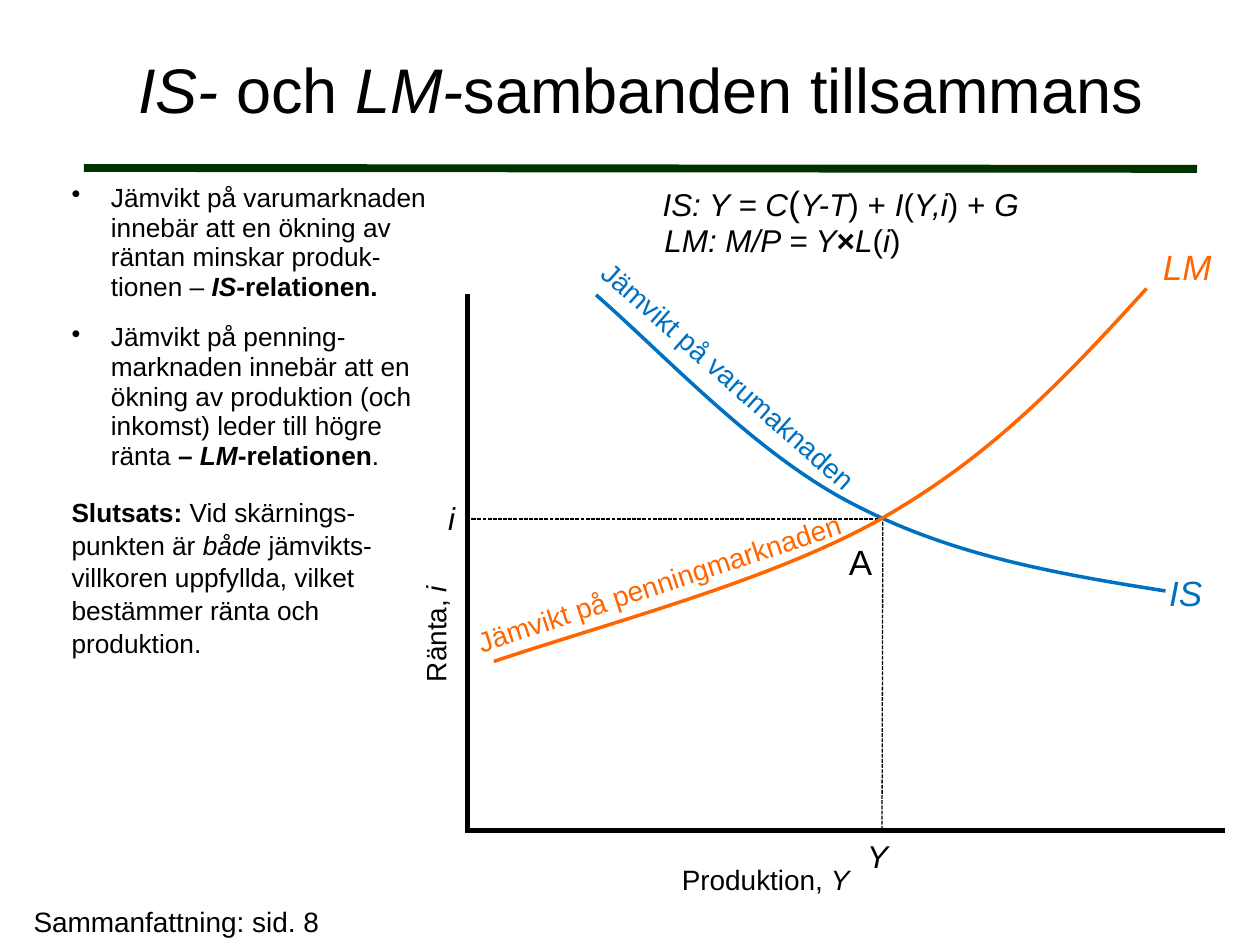
from lxml import etree
from pptx import Presentation
from pptx.dml.color import RGBColor
from pptx.enum.dml import MSO_LINE
from pptx.enum.shapes import MSO_CONNECTOR
from pptx.enum.text import MSO_ANCHOR, PP_ALIGN
from pptx.oxml.ns import qn
from pptx.util import Pt

STRAIGHT = MSO_CONNECTOR.STRAIGHT
DASH = MSO_LINE.SQUARE_DOT
LEFT, CENTER = PP_ALIGN.LEFT, PP_ALIGN.CENTER
TOP, MIDDLE = MSO_ANCHOR.TOP, MSO_ANCHOR.MIDDLE

COLORS = {"text": "000000", "rule": "003300", "is": "0070C0", "lm": "FF6600"}
FONT = "Arial"

ORIGIN_X, ORIGIN_Y = 267, 474.5
EQUILIBRIUM_X, EQUILIBRIUM_Y = 504, 296.6


class SlideBuilder:
    def __init__(self, slide):
        self.slide = slide

    def color(self, name):
        return RGBColor.from_string(COLORS[name])

    def line(self, start, end, width, color="text", dash=None):
        connector = self.slide.shapes.add_connector(
            STRAIGHT, *(Pt(value) for value in (*start, *end)))
        connector.line.color.rgb = self.color(color)
        connector.line.width = Pt(width)
        if dash:
            connector.line.dash_style = dash
        etree.SubElement(connector.element.spPr, qn("a:effectLst"))

    def curve(self, start, segments, color):
        """Draw cubic segments, each given as two control points and an end."""
        builder = self.slide.shapes.build_freeform(Pt(start[0]), Pt(start[1]))
        ends = [(Pt(x), Pt(y)) for _, _, (x, y) in segments]
        builder.add_line_segments(ends, close=False)
        shape = builder.convert_to_shape()
        for node, segment in zip(shape.element.xpath(".//a:lnTo"), segments):
            cubic = etree.Element(qn("a:cubicBezTo"))
            for x, y in segment:
                etree.SubElement(cubic, qn("a:pt"),
                                 x=str(Pt(x) - shape.left), y=str(Pt(y) - shape.top))
            node.getparent().replace(node, cubic)
        shape.fill.background()
        shape.line.color.rgb = self.color(color)
        shape.line.width = Pt(2)
        shape.shadow.inherit = False

    def text(self, box, runs, size, color="text", align=LEFT, anchor=TOP,
             wrap=False, rotation=0):
        shape = self.slide.shapes.add_textbox(*(Pt(value) for value in box))
        shape.rotation = rotation
        frame = shape.text_frame
        frame.word_wrap = wrap
        frame.vertical_anchor = anchor
        self.fill_paragraph(frame.paragraphs[0], runs, size, color, align)
        return frame

    def fill_paragraph(self, paragraph, runs, size, color="text", align=LEFT):
        """Add runs of (text, style[, size]); style holds "b" and/or "i"."""
        paragraph.alignment = align
        for text, style, *own_size in runs:
            run = paragraph.add_run()
            run.text = text
            font = run.font
            font.name = FONT
            font.size = Pt(own_size[0] if own_size else size)
            font.bold = "b" in style
            font.italic = "i" in style
            font.color.rgb = self.color(color)

    def bullet(self, paragraph):
        properties = paragraph._p.get_or_add_pPr()
        properties.set("marL", str(Pt(22.5)))
        properties.set("indent", str(Pt(-22.5)))
        etree.SubElement(properties, qn("a:buChar"), char="•")

    def body(self, box, bullets, conclusion, size):
        frame = self.text(box, [], size, wrap=True)
        for index, runs in enumerate([*bullets, conclusion]):
            paragraph = frame.add_paragraph() if index else frame.paragraphs[0]
            is_bullet = index < len(bullets)
            if is_bullet:
                self.bullet(paragraph)
            else:
                paragraph.space_before = Pt(1.5)
            paragraph.line_spacing = 0.94 if is_bullet else 1.04
            paragraph.space_after = Pt(12)
            self.fill_paragraph(paragraph, runs, size)


def main():
    presentation = Presentation()
    presentation.slide_width, presentation.slide_height = Pt(720), Pt(540)
    slide = presentation.slides.add_slide(presentation.slide_layouts[6])
    builder = SlideBuilder(slide)

    builder.line((48, 96), (684, 96.5), 4.5, "rule")
    builder.text((48, 6, 636, 89),
                 [("IS- ", "i"), ("och ", ""), ("LM-", "i"),
                  ("sambanden tillsammans", "")],
                 36, align=CENTER, anchor=MIDDLE, wrap=True)

    builder.body(
        (33.8, 101.5, 224.6, 363.6),
        [[("Jämvikt på varumarknaden innebär att en ökning av räntan "
           "minskar produk-tionen – ", ""), ("IS", "bi"), ("-relationen.", "b")],
         [("Jämvikt på penning-marknaden innebär att en ökning av produktion "
           "(och inkomst) leder till högre ränta ", ""), ("– ", "b"),
          ("LM", "bi"), ("-relationen", "b"), (".", "")]],
        [("Slutsats: ", "b"), ("Vid skärnings-punkten är ", ""), ("både ", "i"),
         ("jämvikts-villkoren uppfyllda, vilket bestämmer ränta och produktion.", "")],
        15)

    builder.text((371.5, 100, 250, 31.5),
                 [("IS: Y = C", "i"), ("(", "", 20), ("Y-T", "i"), (") + ", ""),
                  ("I", "i"), ("(", ""), ("Y,i", "i"), (") + ", ""), ("G", "i")],
                 18, wrap=True)
    builder.text((372.5, 122.5, 250, 29),
                 [("LM: M/P = Y", "i"), ("×", "b"), ("L", "i"), ("(", ""),
                  ("i", "i"), (")", "")], 18, wrap=True)

    # Axes and their titles
    builder.line((ORIGIN_X - 1.5, ORIGIN_Y), (700, ORIGIN_Y), 3)
    builder.line((ORIGIN_X, ORIGIN_Y), (ORIGIN_X, 168), 3)
    builder.text((213.8, 348.5, 70, 26.6), [("Ränta, ", ""), ("i", "i")], 16,
                 rotation=270)
    builder.text((382.5, 489.6, 111.6, 26.6), [("Produktion, ", ""), ("Y", "i")], 16)

    # Equilibrium
    builder.line((EQUILIBRIUM_X + 0.5, EQUILIBRIUM_Y + 1.5), (EQUILIBRIUM_X, 476),
                 0.75, dash=DASH)
    builder.line((EQUILIBRIUM_X - 2, EQUILIBRIUM_Y), (ORIGIN_X + 2, EQUILIBRIUM_Y),
                 0.75, dash=DASH)
    builder.text((478, 305.5, 28, 31.5), [("A", "")], 20)
    builder.text((488.5, 474.5, 26.6, 29), [("Y", "i")], 18)
    builder.text((249, 281.5, 18.7, 29), [("i", "i")], 18)

    # IS and LM curves with their labels
    builder.curve((340.6, 168.5),
                  [((382.3, 205.2), (432.7, 259.9), (487.4, 288)),
                   ((541.4, 316.1), (596.9, 326.9), (666, 337.7))], "is")
    builder.text((661, 323.3, 33.8, 31.5), [("IS", "i")], 20, "is")
    builder.text((314.6, 201.6, 203, 26.6), [("Jämvikt på varumaknaden", "")], 16,
                 "is", CENTER, rotation=41.6)
    builder.curve((282.2, 378),
                  [((348.5, 355.7), (440.6, 331.9), (503.3, 296.6)),
                   ((565.2, 261.4), (606.2, 218.9), (655.2, 164.9))], "lm")
    builder.text((657.4, 136.8, 42.5, 31.5), [("LM", "i")], 20, "lm")
    builder.text((259.2, 319.7, 234.7, 26.6), [("Jämvikt på penningmarknaden", "")],
                 16, "lm", CENTER, rotation=341.6)

    builder.text((0, 513.4, 201.6, 26.6), [("Sammanfattning: sid. 8", "")], 16,
                 align=CENTER, wrap=True)

    presentation.save("out.pptx")


if __name__ == "__main__":
    main()
